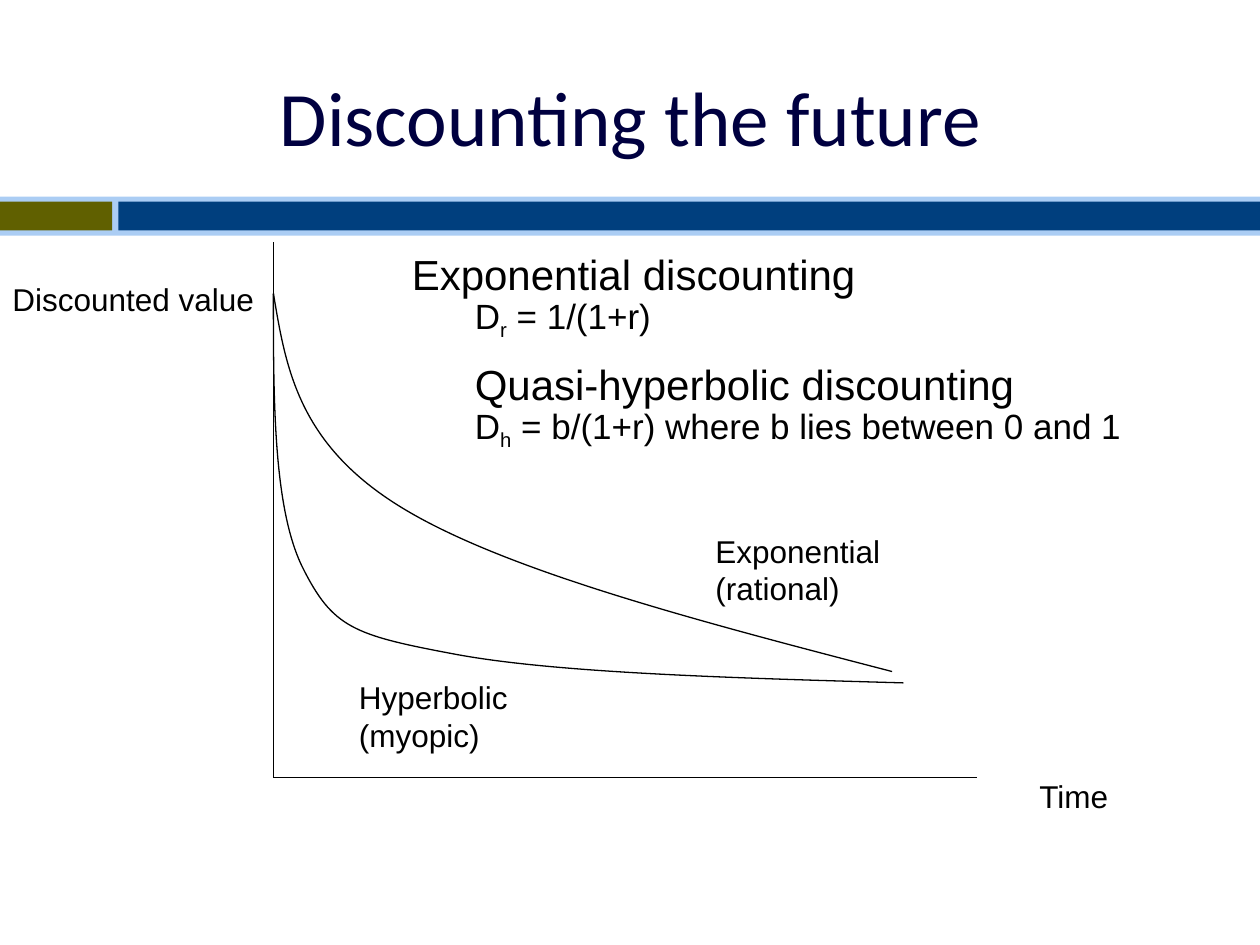
"""Build the slide comparing exponential and hyperbolic discounting curves."""
from lxml import etree
from pptx import Presentation
from pptx.dml.color import RGBColor
from pptx.enum.shapes import MSO_CONNECTOR, MSO_SHAPE
from pptx.enum.text import MSO_ANCHOR, PP_ALIGN
from pptx.oxml.ns import qn
from pptx.util import Inches, Pt

RECTANGLE, STRAIGHT = MSO_SHAPE.RECTANGLE, MSO_CONNECTOR.STRAIGHT
CENTER, MIDDLE = PP_ALIGN.CENTER, MSO_ANCHOR.MIDDLE

THEME = {
    "title": {"name": "Calibri", "size": Pt(44), "color": "000040"},
    "label": {"name": "Arial", "size": Pt(18), "color": "000000"},
    "heading": {"name": "Arial", "size": Pt(24), "color": "000000"},
    "formula": {"name": "Arial", "size": Pt(20), "color": "000000"},
    "ink": "000000",
    "line_width": Pt(0.75),
}

TITLE = "Discounting the future"
TITLE_BOX = (0.67, 0.33, 8.67, 1.17)
BANDS = [
    ((0, 1.56, 10, 0.31), "ABCDF4"),
    ((0, 1.6, 0.89, 0.23), "606000"),
    ((0.94, 1.6, 9.06, 0.23), "003F7E"),
]
ORIGIN = (2.17, 6.17)
AXIS_ENDS = [(2.17, 1.92), (7.75, 6.17)]
CURVE_START = (2.17, 2.33)
CURVES = {
    "exponential": [
        (2.27, 2.93), (2.37, 3.53), (3.19, 4.03),
        (4.01, 4.53), (5.54, 4.93), (7.08, 5.33),
    ],
    "hyperbolic": [
        (2.17, 3.18), (2.17, 4.03), (2.4, 4.5),
        (2.64, 4.98), (2.8, 5.04), (3.6, 5.19),
        (4.39, 5.34), (5.78, 5.38), (7.17, 5.42),
    ],
}
LABELS = [
    (["Exponential", "(rational)"], (5.58, 4.17, 1.51, 0.7)),
    (["Hyperbolic", "(myopic)"], (2.75, 5.33, 1.42, 0.7)),
    (["Time"], (8.15, 6.12, 0.76, 0.4)),
    (["Discounted value"], (0, 2.17, 2.12, 0.4)),
]
FORMULA_BOX = (3.17, 2, 6.83, 1.56)
FORMULA_LINES = [
    ("heading", 0, 0, ["Exponential discounting"]),
    ("formula", 0.5, 0, ["D", "r", " = 1/(1+r)"]),
    ("heading", 0.5, 18, ["Quasi-hyperbolic discounting"]),
    ("formula", 0.5, 0, ["D", "h", " = b/(1+r) where b lies between 0 and 1"]),
]


def inches(values):
    return [Inches(value) for value in values]


def add_run(paragraph, text, style):
    run = paragraph.add_run()
    run.text = text
    for attribute, value in THEME[style].items():
        if attribute == "color":
            run.font.color.rgb = RGBColor.from_string(value)
        else:
            setattr(run.font, attribute, value)
    return run


def add_paragraphs(frame, count):
    return [frame.paragraphs[0]] + [frame.add_paragraph() for _ in range(count - 1)]


def ink(outline):
    outline.line.color.rgb = RGBColor.from_string(THEME["ink"])
    outline.line.width = THEME["line_width"]


def add_band(slide, box, color):
    band = slide.shapes.add_shape(RECTANGLE, *inches(box))
    band.shadow.inherit = False
    band.fill.solid()
    band.fill.fore_color.rgb = RGBColor.from_string(color)
    band.line.fill.background()


def add_axis(slide, end):
    axis = slide.shapes.add_connector(STRAIGHT, *inches(ORIGIN + end))
    ink(axis)
    etree.SubElement(axis.element.spPr, qn("a:effectLst"))


def add_curve(slide, points):
    builder = slide.shapes.build_freeform(*inches(CURVE_START))
    builder.add_line_segments([inches(point) for point in points], close=False)
    curve = builder.convert_to_shape()
    curve.shadow.inherit = False
    curve.fill.background()
    ink(curve)
    segments = list(curve.element.iter(qn("a:lnTo")))
    for first in range(0, len(segments), 3):
        bezier = etree.Element(qn("a:cubicBezTo"))
        segments[first].addprevious(bezier)
        for segment in segments[first:first + 3]:
            bezier.append(segment[0])
            segment.getparent().remove(segment)


def add_label(slide, lines, box):
    frame = slide.shapes.add_textbox(*inches(box)).text_frame
    frame.word_wrap = False
    for paragraph, text in zip(add_paragraphs(frame, len(lines)), lines):
        add_run(paragraph, text, "label")


def add_formulas(slide):
    frame = slide.shapes.add_textbox(*inches(FORMULA_BOX)).text_frame
    frame.word_wrap = True
    paragraphs = add_paragraphs(frame, len(FORMULA_LINES))
    for paragraph, (style, indent, gap, parts) in zip(paragraphs, FORMULA_LINES):
        paragraph.line_spacing = 0.8
        paragraph.space_before = Pt(gap)
        paragraph._p.get_or_add_pPr().set("marL", str(Inches(indent)))
        for position, text in enumerate(parts):
            run = add_run(paragraph, text, style)
            if position == 1:
                run.font._element.set("baseline", "-25000")


def add_title(slide):
    title = slide.shapes.title
    title.left, title.top, title.width, title.height = inches(TITLE_BOX)
    title.text_frame.vertical_anchor = MIDDLE
    heading = title.text_frame.paragraphs[0]
    heading.alignment = CENTER
    add_run(heading, TITLE, "title")


def main():
    deck = Presentation()
    deck.slide_width, deck.slide_height = Inches(10), Inches(7.5)
    slide = deck.slides.add_slide(deck.slide_layouts[5])
    add_title(slide)
    for box, color in BANDS:
        add_band(slide, box, color)
    for end in AXIS_ENDS:
        add_axis(slide, end)
    for points in CURVES.values():
        add_curve(slide, points)
    for lines, box in LABELS:
        add_label(slide, lines, box)
    add_formulas(slide)
    deck.save("out.pptx")


if __name__ == "__main__":
    main()
